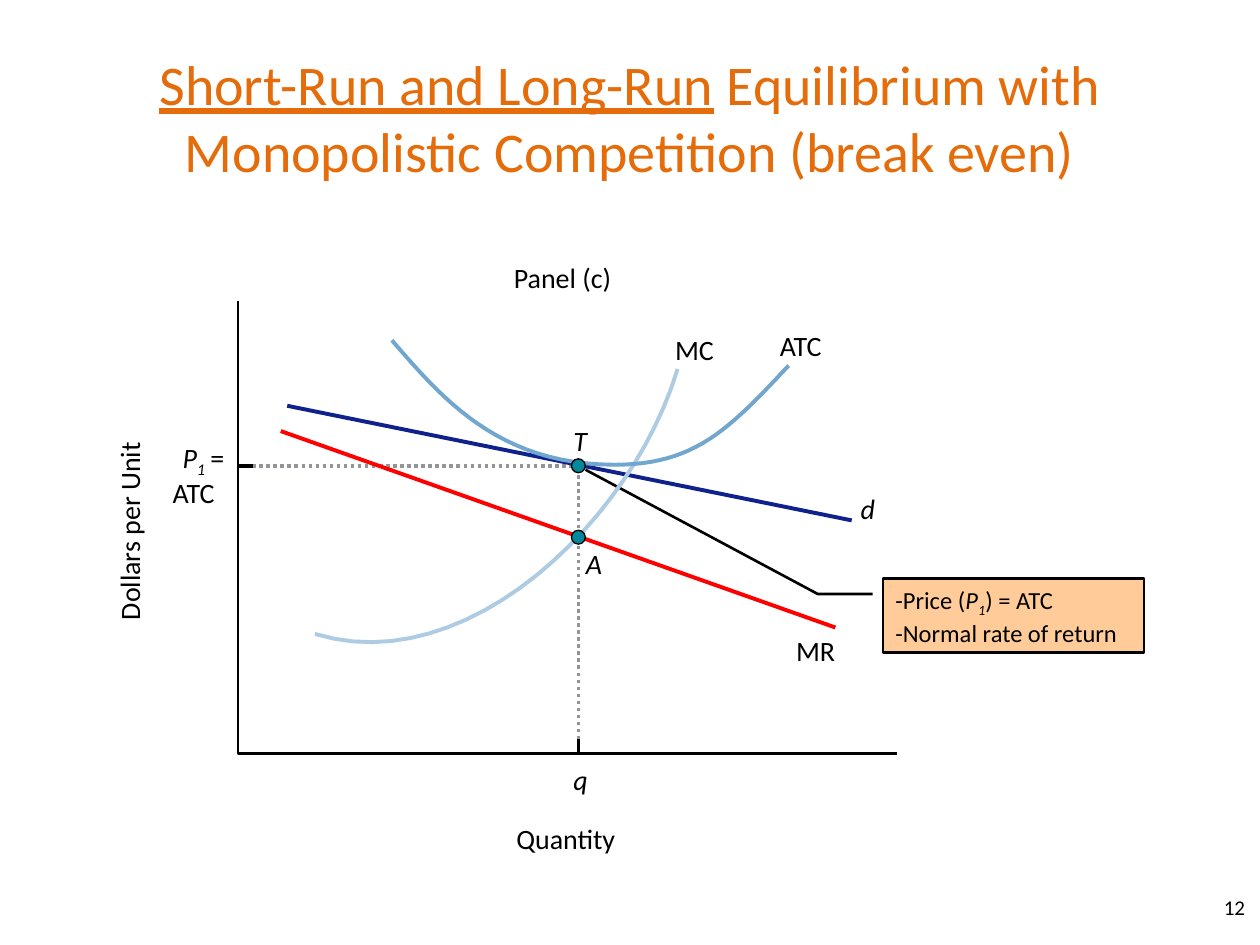
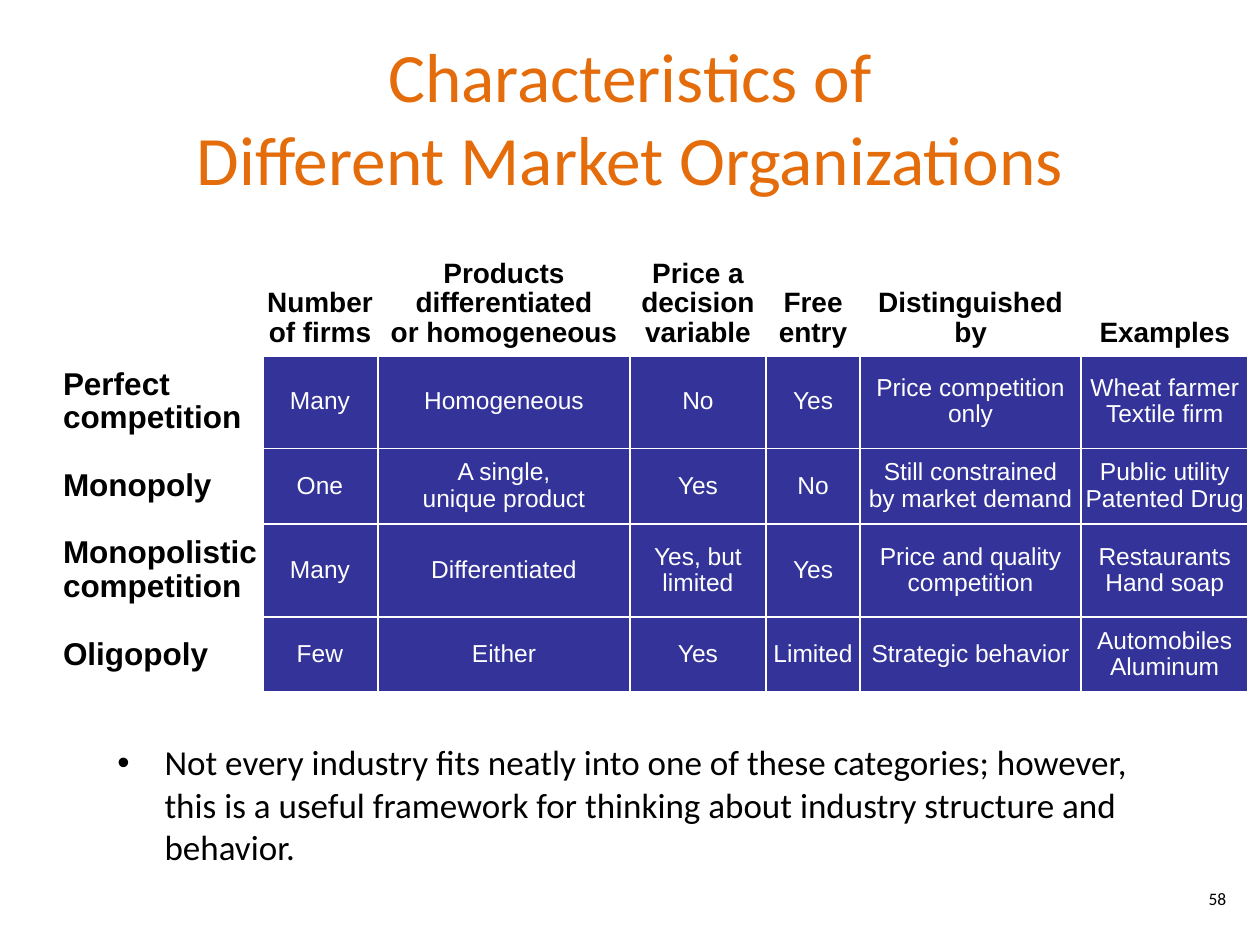
import pptx
import pptx.util
import pptx.dml.color
import pptx.enum.dml
import pptx.enum.shapes
import pptx.enum.text
import pptx.oxml
import pptx.oxml.ns

Cm = pptx.util.Cm
Pt = pptx.util.Pt
SHAPE = pptx.enum.shapes.MSO_SHAPE
ALIGN = pptx.enum.text.PP_ALIGN
ANCHOR = pptx.enum.text.MSO_ANCHOR
FIT = pptx.enum.text.MSO_AUTO_SIZE

BLACK = "000000"
WHITE = "FFFFFF"
TITLE_ORANGE = "E46C0A"
CALLOUT_FILL = "FFCC99"
GUIDE_GREY = "939598"
DEMAND_BLUE = "0F218B"
MR_RED = "FF0000"
MC_BLUE = "ADCBE2"
ATC_BLUE = "71A6CE"
POINT_TEAL = "00889B"
CELL_BLUE = "333399"

TITLE_BOX = (1.27, 0.76, 22.86, 3.18)
DIAGRAM_BOX = (4.8, 6.07, 13.28, 9.12)
TABLE_BOX = (1.27, 5.08, 23.9, 8.7)
BODY_BOX = (2.11, 14.81, 21.79, 3.18)

COLUMN_WIDTHS = [4.01, 2.34, 5.08, 2.74, 1.9, 4.45, 3.38]
ROW_HEIGHTS = [1.9, 1.88, 1.52, 1.88, 1.52]
MARKETS = [
    ["", "Number of firms", "Products differentiated\nor homogeneous",
     "Price a decision variable", "Free entry", "Distinguished\nby", "Examples"],
    ["Perfect competition", "Many", "Homogeneous", "No", "Yes",
     "Price competition only", "Wheat farmer\nTextile firm"],
    ["Monopoly", "One", "A single,\nunique product", "Yes", "No",
     "Still constrained\nby market demand", "Public utility\nPatented Drug"],
    ["Monopolistic\ncompetition", "Many", "Differentiated", "Yes, but limited", "Yes",
     "Price and quality competition", "Restaurants\nHand soap"],
    ["Oligopoly", "Few", "Either", "Yes", "Limited",
     "Strategic behavior", "Automobiles\nAluminum"],
]


def rgb(value):
    return pptx.dml.color.RGBColor.from_string(value)


def lengths(*values):
    return [Cm(v) for v in values]


def style_font(font, size, color=BLACK, name="Calibri", bold=False):
    font.name = name
    font.size = Pt(size)
    font.bold = bold
    font.color.rgb = rgb(color)


def add_runs(p, parts, size, color=BLACK):
    for text, marks in parts:
        r = p.add_run()
        r.text = text
        style_font(r.font, size, color)
        if "i" in marks:
            r.font.italic = True
        if "u" in marks:
            r.font.underline = True
        if "s" in marks:
            r._r.get_or_add_rPr().set("baseline", "-25000")


def place(sp, box):
    sp.left, sp.top, sp.width, sp.height = lengths(*box)


def add_title(slide, parts, size):
    sp = slide.shapes.title
    place(sp, TITLE_BOX)
    tf = sp.text_frame
    tf.auto_size = FIT.NONE
    tf.vertical_anchor = ANCHOR.MIDDLE
    p = tf.paragraphs[0]
    p.alignment = ALIGN.CENTER
    add_runs(p, parts, size, TITLE_ORANGE)


def add_page_number(slide, number, box, size, anchor):
    tf = slide.shapes.add_textbox(*lengths(*box)).text_frame
    tf.word_wrap = True
    tf.vertical_anchor = anchor
    p = tf.paragraphs[0]
    p.alignment = ALIGN.RIGHT
    add_runs(p, [(number, "")], size)


def add_label(slide, x, y, width, parts, rotation=0):
    sp = slide.shapes.add_textbox(*lengths(x, y, width, 0.69))
    sp.rotation = rotation
    tf = sp.text_frame
    tf.margin_left = tf.margin_right = tf.margin_top = tf.margin_bottom = 0
    tf.word_wrap = False
    tf.auto_size = FIT.SHAPE_TO_FIT_TEXT
    add_runs(tf.paragraphs[0], parts, 16)


def add_line(slide, x1, y1, x2, y2, color, width, dotted=False):
    sp = slide.shapes.add_connector(
        pptx.enum.shapes.MSO_CONNECTOR.STRAIGHT, *lengths(x1, y1, x2, y2))
    sp.line.color.rgb = rgb(color)
    sp.line.width = Pt(width)
    if dotted:
        sp.line.dash_style = pptx.enum.dml.MSO_LINE.ROUND_DOT
    sp._element.spPr.append(pptx.oxml.parse_xml(
        "<a:effectLst %s/>" % pptx.oxml.ns.nsdecls("a")))


def add_path(slide, points, color, width):
    points = [lengths(*point) for point in points]
    builder = slide.shapes.build_freeform(*points[0])
    builder.add_line_segments(points[1:], close=False)
    sp = builder.convert_to_shape()
    sp.shadow.inherit = False
    sp.fill.background()
    sp.line.color.rgb = rgb(color)
    sp.line.width = Pt(width)


def bezier(controls, steps=24):
    points = [controls[0]]
    for start in range(0, len(controls) - 1, 3):
        a, b, c, d = controls[start:start + 4]
        for step in range(1, steps + 1):
            t = step / steps
            u = 1 - t
            points.append(tuple(
                u ** 3 * a[k] + 3 * u * u * t * b[k] + 3 * u * t * t * c[k] + t ** 3 * d[k]
                for k in (0, 1)))
    return points


def add_filled_shape(slide, kind, box, fill, line_width):
    sp = slide.shapes.add_shape(kind, *lengths(*box))
    sp.shadow.inherit = False
    sp.fill.solid()
    sp.fill.fore_color.rgb = rgb(fill)
    sp.line.color.rgb = rgb(BLACK)
    sp.line.width = Pt(line_width)
    return sp


def add_callout(slide, box):
    sp = add_filled_shape(slide, SHAPE.LINE_CALLOUT_2, box, CALLOUT_FILL, 1.5)
    for i, value in enumerate([0.21, -0.04, 0.21, -0.25, -1.46, -1.14]):
        sp.adjustments[i] = value
    tf = sp.text_frame
    tf.word_wrap = False
    tf.vertical_anchor = ANCHOR.TOP
    rows = [[("-Price (", ""), ("P", "i"), ("1", "is"), (") = ATC", "")],
            [("-Normal rate of return", "")]]
    for i, parts in enumerate(rows):
        p = tf.add_paragraph() if i else tf.paragraphs[0]
        p.alignment = ALIGN.LEFT
        add_runs(p, parts, 14)


def add_diagram(slide, box):
    left, top, width, height = box
    right, bottom = left + width, top + height
    quantity_x, price_y, mr_y = left + 6.86, top + 3.32, top + 4.76
    tick = 0.3

    def at(*points):
        return [(left + x, top + y) for x, y in points]

    add_callout(slide, (left + 13, top + 5.59, 5.26, 1.5))

    add_line(slide, left, price_y, quantity_x, price_y, GUIDE_GREY, 2, True)
    add_line(slide, quantity_x, bottom, quantity_x, price_y, GUIDE_GREY, 2, True)
    add_line(slide, quantity_x, bottom, quantity_x, bottom - tick, BLACK, 2)
    add_line(slide, left, price_y, left + tick, price_y, BLACK, 2)

    add_line(slide, left + 0.99, top + 2.11, left + 12.37, top + 4.42, DEMAND_BLUE, 2.25)
    mc = at((1.55, 6.71), (4.6, 7.65), (7.95, 4.42), (8.86, 1.37))
    atc = at((3.1, 0.79), (4.09, 1.93), (5.23, 3.3), (7.59, 3.3),
             (9.22, 3.3), (9.91, 2.57), (11.1, 1.3))
    add_path(slide, bezier(mc), MC_BLUE, 2.25)
    add_path(slide, bezier(atc), ATC_BLUE, 2.25)
    add_path(slide, [(right, bottom), (left, bottom), (left, top)], BLACK, 1.5)
    add_line(slide, left + 0.86, top + 2.62, left + 12.04, top + 6.58, MR_RED, 2.25)

    size = 0.28
    for y in (mr_y, price_y):
        dot = (quantity_x - size / 2, y - size / 2, size, size)
        add_filled_shape(slide, SHAPE.OVAL, dot, POINT_TEAL, 0)

    labels = [
        (5.56, -0.81, 2.26, [("Panel (c)", "")]),
        (5.61, 10.49, 2.11, [("Quantity", "")]),
        (-1.32, 3.51, 1.12, [("ATC", "")]),
        (6.76, 9.3, 0.3, [("q", "i")]),
        (-1.12, 2.82, 0.58, [("P", "i"), ("1", "is")]),
        (-0.56, 2.82, 0.35, [("=", "")]),
        (12.55, 3.84, 0.3, [("d", "i")]),
        (8.81, 0.64, 0.89, [("MC", "")]),
        (10.92, 0.56, 1.12, [("ATC", "")]),
        (11.25, 6.71, 0.89, [("MR", "")]),
        (7.01, 4.95, 0.38, [("A", "i")]),
        (6.76, 2.46, 0.36, [("T", "i")]),
    ]
    for x, y, label_width, parts in labels:
        add_label(slide, left + x, top + y, label_width, parts)
    add_label(slide, left - 4.14, top + 4.14, 3.89, [("Dollars per Unit", "")], 270)


def set_borders(cell, widths):
    tcPr = cell._tc.get_or_add_tcPr()
    for side, width in widths.items():
        tcPr.append(pptx.oxml.parse_xml(
            '<a:ln%s %s w="%d"><a:solidFill><a:srgbClr val="%s"/></a:solidFill></a:ln%s>'
            % (side, pptx.oxml.ns.nsdecls("a"), Pt(width), WHITE, side)))


def format_cell(cell, row, col):
    is_header, is_name = row == 0, col == 0
    is_label = is_header or is_name
    last_row, last_col = len(ROW_HEIGHTS) - 1, len(COLUMN_WIDTHS) - 1
    thick = {"L": col == 1, "R": col in (0, last_col),
             "T": row == 1, "B": row in (0, last_row)}
    set_borders(cell, {side: 2.25 if edge else 1 for side, edge in thick.items()})
    cell.fill.solid()
    cell.fill.fore_color.rgb = rgb(WHITE if is_label else CELL_BLUE)
    cell.margin_left = cell.margin_right = 0
    cell.margin_top = 0 if is_header else Cm(0.13)
    cell.margin_bottom = Cm(0.13)
    cell.vertical_anchor = ANCHOR.BOTTOM if is_header else ANCHOR.MIDDLE
    p = cell.text_frame.paragraphs[0]
    p.text = MARKETS[row][col]
    p.alignment = ALIGN.LEFT if is_name else ALIGN.CENTER
    p.line_spacing = 0.96
    size = 16 if is_header else 18 if is_name else 14
    for r in p.runs:
        style_font(r.font, size, BLACK if is_label else WHITE, "Arial", is_label)


def add_market_table(slide, box):
    table = slide.shapes.add_table(
        len(ROW_HEIGHTS), len(COLUMN_WIDTHS), *lengths(*box)).table
    table.first_row = table.horz_banding = False
    for column, width in zip(table.columns, COLUMN_WIDTHS):
        column.width = Cm(width)
    for i, height in enumerate(ROW_HEIGHTS):
        table.rows[i].height = Cm(height)
        for j in range(len(COLUMN_WIDTHS)):
            format_cell(table.cell(i, j), i, j)


def add_body(slide, box, text):
    sp = slide.placeholders[1]
    place(sp, box)
    tf = sp.text_frame
    tf.auto_size = FIT.NONE
    p = tf.paragraphs[0]
    p.space_before = Pt(0)
    add_runs(p, [(text, "")], 20)


def equilibrium_slide(prs):
    slide = prs.slides.add_slide(prs.slide_layouts[5])
    add_page_number(slide, "12", (15.39, 17.78, 9.96, 1.02), 12, ANCHOR.MIDDLE)
    add_title(slide, [("Short-Run and Long-Run", "u"),
                      (" Equilibrium with Monopolistic Competition (break even)", "")], 32)
    add_diagram(slide, DIAGRAM_BOX)


def characteristics_slide(prs):
    slide = prs.slides.add_slide(prs.slide_layouts[1])
    add_page_number(slide, "58", (19.05, 17.78, 5.92, 1.02), 10, ANCHOR.TOP)
    add_title(slide, [("Characteristics of", "")], 39.6)
    p = slide.shapes.title.text_frame.paragraphs[0]
    p.add_line_break()
    add_runs(p, [("Different Market Organizations", "")], 39.6, TITLE_ORANGE)
    add_market_table(slide, TABLE_BOX)
    add_body(slide, BODY_BOX,
             "Not every industry fits neatly into one of these categories; however, "
             "this is a useful framework for thinking about industry structure and behavior.")


def main():
    prs = pptx.Presentation()
    prs.slide_width, prs.slide_height = lengths(25.4, 19.05)
    equilibrium_slide(prs)
    characteristics_slide(prs)
    prs.save("out.pptx")


if __name__ == "__main__":
    main()
